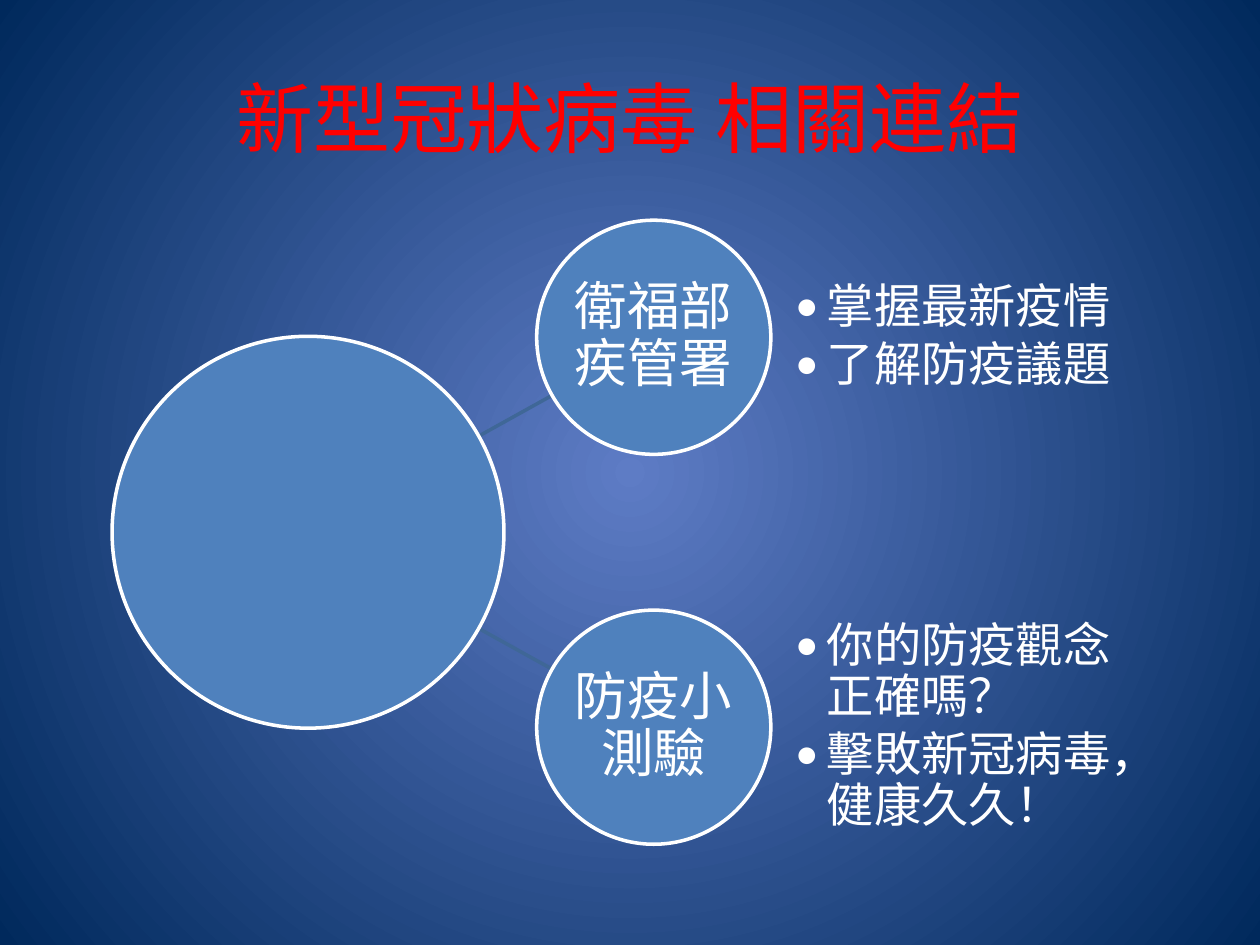
from dataclasses import dataclass

from lxml.etree import SubElement
from pptx import Presentation
from pptx.dml.color import RGBColor
from pptx.enum.shapes import MSO_CONNECTOR, MSO_SHAPE
from pptx.enum.text import MSO_ANCHOR, PP_ALIGN
from pptx.oxml.ns import qn
from pptx.util import Cm, Pt

FONT = "Calibri"
WHITE, RED, BLUE, LINE = "FFFFFF", "FF0000", "4F81BD", "3F6797"
CENTER_Y = 10.73
HUB_X, HUB_SIZE = 2.26, 7.9
TOPIC_X, TOPIC_SIZE, TOPIC_OFFSET = 10.82, 4.72, 3.93
LIST_X, LIST_W = 16.03, 7.11


@dataclass
class Topic:
    name: str
    points: list[str]
    side: int


TOPICS = [
    Topic("衛福部疾管署", ["掌握最新疫情", "了解防疫議題"], -1),
    Topic("防疫小測驗", ["你的防疫觀念正確嗎？", "擊敗新冠病毒，健康久久！"], 1),
]


def rgb(value: str) -> RGBColor:
    return RGBColor.from_string(value)


def format_text(tf, size: float, color: str) -> None:
    tf.word_wrap = True
    tf.vertical_anchor = MSO_ANCHOR.MIDDLE
    for p in tf.paragraphs:
        for r in p.runs:
            r.font.name = FONT
            r.font.size = Pt(size)
            r.font.color.rgb = rgb(color)


def set_margins(tf, margin: float) -> None:
    tf.margin_left = tf.margin_right = Cm(margin)
    tf.margin_top = tf.margin_bottom = Cm(margin)


def set_background(s, inner: str, outer: str) -> None:
    fill = s.background.fill
    fill.gradient()
    for stop, color in zip(fill.gradient_stops, (inner, outer)):
        stop.color.rgb = rgb(color)
    grad = s.element.find(".//" + qn("a:gradFill"))
    grad.remove(grad.find(qn("a:lin")))
    path = SubElement(grad, qn("a:path"), path="circle")
    SubElement(path, qn("a:fillToRect"), l="50000", t="50000", r="50000", b="50000")


def add_title(s, text: str) -> None:
    sp = s.shapes.title
    sp.left, sp.top, sp.width, sp.height = Cm(1.27), Cm(0.76), Cm(22.86), Cm(3.18)
    sp.text_frame.text = text
    sp.text_frame.paragraphs[0].alignment = PP_ALIGN.CENTER
    format_text(sp.text_frame, 44, RED)


def add_link(s, side: int) -> None:
    link = s.shapes.add_connector(
        MSO_CONNECTOR.STRAIGHT,
        Cm(8.97), Cm(CENTER_Y + side * 1.56),
        Cm(11.13), Cm(CENTER_Y + side * 2.76),
    )
    link.line.color.rgb = rgb(LINE)
    link.line.width = Pt(2)
    SubElement(link.element.spPr, qn("a:effectLst"))


def add_circle(s, x: float, center_y: float, size: float, text: str = "") -> None:
    sp = s.shapes.add_shape(
        MSO_SHAPE.OVAL, Cm(x), Cm(center_y - size / 2), Cm(size), Cm(size)
    )
    sp.shadow.inherit = False
    sp.fill.solid()
    sp.fill.fore_color.rgb = rgb(BLUE)
    sp.line.color.rgb = rgb(WHITE)
    sp.line.width = Pt(2)
    if text:
        tf = sp.text_frame
        tf.text = text
        set_margins(tf, 0.05)
        p = tf.paragraphs[0]
        p.alignment = PP_ALIGN.CENTER
        p.line_spacing = 0.9
        format_text(tf, 30, WHITE)


def add_points(s, center_y: float, points: list[str]) -> None:
    sp = s.shapes.add_textbox(
        Cm(LIST_X), Cm(center_y - TOPIC_SIZE / 2), Cm(LIST_W), Cm(TOPIC_SIZE)
    )
    tf = sp.text_frame
    tf.text = "\n".join(points)
    set_margins(tf, 0)
    for p in tf.paragraphs:
        p.level = 1
        p.alignment = PP_ALIGN.LEFT
        p.line_spacing = 0.9
        p.space_after = Pt(4)
        pPr = p._p.get_or_add_pPr()
        pPr.set("marL", str(Cm(0.64)))
        pPr.set("indent", str(Cm(-0.64)))
        SubElement(pPr, qn("a:buFont"), typeface=FONT)
        SubElement(pPr, qn("a:buChar"), char="•")
    format_text(tf, 27, WHITE)


def main() -> None:
    """Build the slide of coronavirus links and save it."""
    prs = Presentation()
    prs.slide_width, prs.slide_height = Cm(25.4), Cm(19.05)
    s = prs.slides.add_slide(prs.slide_layouts[5])
    set_background(s, "5E7CC5", "00295C")
    add_title(s, "新型冠狀病毒 相關連結")
    for topic in TOPICS:
        add_link(s, topic.side)
    add_circle(s, HUB_X, CENTER_Y, HUB_SIZE)
    for topic in TOPICS:
        center_y = CENTER_Y + topic.side * TOPIC_OFFSET
        add_circle(s, TOPIC_X, center_y, TOPIC_SIZE, topic.name)
        add_points(s, center_y, topic.points)
    prs.save("out.pptx")


if __name__ == "__main__":
    main()
